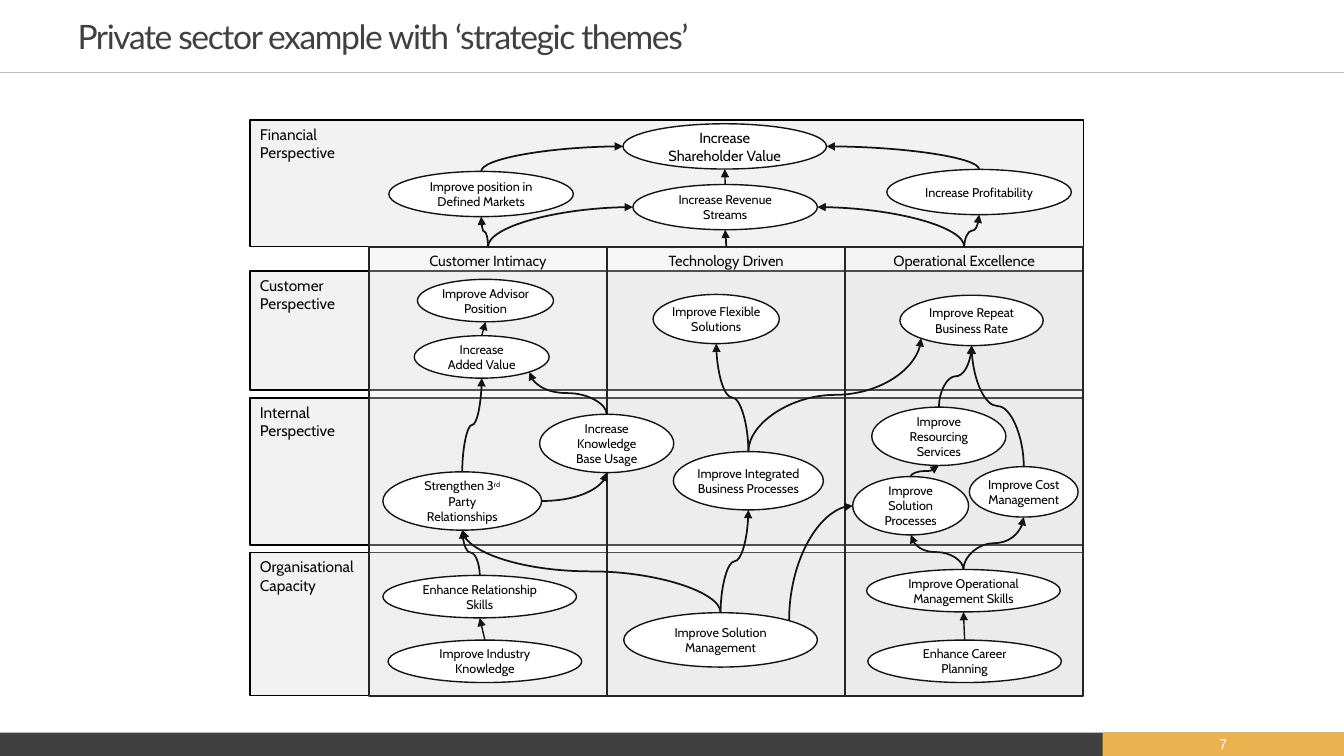
import pptx
import pptx.util
import pptx.dml.color
import pptx.enum.shapes
import pptx.enum.text
import pptx.oxml
import pptx.oxml.ns
import math

Cm, Pt = pptx.util.Cm, pptx.util.Pt
qn = pptx.oxml.ns.qn
SHAPE = pptx.enum.shapes.MSO_SHAPE
LINK = pptx.enum.shapes.MSO_CONNECTOR
ALIGN = pptx.enum.text.PP_ALIGN
ANCHOR = pptx.enum.text.MSO_ANCHOR

COLOURS = {"bar": "404040", "gold": "EBB250", "rule": "BFBFBF", "white": "FFFFFF",
           "black": "000000", "label": "080808", "row": "F2F2F2", "outline": "131313",
           "column line": "262626", "intimacy": "EAEAEA", "technology": "E6E6E6",
           "excellence": "DFDFDF"}
RGB = {name: pptx.dml.color.RGBColor.from_string(code) for name, code in COLOURS.items()}


def add_block(kind, box, fill, line=None, weight=1):
    block = slide.shapes.add_shape(kind, *[Cm(length) for length in box])
    block.shadow.inherit = False
    block.fill.solid()
    block.fill.fore_color.rgb = RGB[fill]
    if line:
        block.line.color.rgb = RGB[line]
        block.line.width = Pt(weight)
    else:
        block.line.fill.background()
    return block


def write(block, text, size, colour, font="Cabin", align=ALIGN.CENTER, **frame_format):
    """Text between ^ marks is set as superscript."""
    frame = block.text_frame
    for key, value in {"word_wrap": True, **frame_format}.items():
        setattr(frame, key, value)
    paragraph = frame.paragraphs[0]
    paragraph.alignment = align
    for i, part in enumerate(text.split("^")):
        for j, words in enumerate(part.split("\n")):
            if j:
                paragraph.add_line_break()
            run = paragraph.add_run()
            run.text = words
            for key, value in {"name": font, "size": Pt(size), "bold": False}.items():
                setattr(run.font, key, value)
            run.font.color.rgb = RGB[colour]
            if i % 2:
                run.font._element.set("baseline", "30000")


deck = pptx.Presentation()
deck.slide_width, deck.slide_height = Cm(33.87), Cm(19.05)
slide = deck.slides.add_slide(deck.slide_layouts[5])

# Title, rule and footer
title = slide.shapes.title
for key, value in {"left": 1.7, "top": 0.1, "width": 24.69, "height": 1.6}.items():
    setattr(title, key, Cm(value))
write(title, "Private sector example with ‘strategic themes’", 24, "bar", "Lato", ALIGN.LEFT,
      vertical_anchor=ANCHOR.MIDDLE, margin_top=0, margin_bottom=0,
      auto_size=pptx.enum.text.MSO_AUTO_SIZE.NONE)
title.text_frame.paragraphs[0].runs[0].font._element.set("spc", "-100")

rule = slide.shapes.add_connector(LINK.STRAIGHT, 0, Cm(1.83), deck.slide_width, Cm(1.83))
rule.line.color.rgb = RGB["rule"]
rule.line.width = Pt(1)
rule._element.spPr.append(pptx.oxml.parse_xml(
    '<a:effectLst xmlns:a="http://schemas.openxmlformats.org/drawingml/2006/main"/>'))

add_block(SHAPE.RECTANGLE, (0, 18.46, 33.87, 0.59), "bar")
page_number = add_block(SHAPE.RECTANGLE, (27.79, 18.46, 6.08, 0.59), "gold")
write(page_number, "7", 10, "white", "Arial", vertical_anchor=ANCHOR.MIDDLE,
      margin_top=0, margin_bottom=0)

# Perspectives (rows); the financial row lies above the themes
perspectives = [("Customer\nPerspective", 6.83, 3.0), ("Internal\nPerspective", 10.03, 3.71),
                ("Organisational\nCapacity", 13.92, 3.61), ("Financial\nPerspective", 3.02, 3.2)]
for name, top, height in perspectives:
    row = add_block(SHAPE.RECTANGLE, (6.3, top, 21.01, height), "row", "black")
    write(row, name, 11, "label", align=ALIGN.LEFT, vertical_anchor=ANCHOR.TOP)

# Strategic themes (translucent columns)
nodes = {}
themes = [("Customer Intimacy", "intimacy"), ("Technology Driven", "technology"),
          ("Operational Excellence", "excellence")]
for i, (name, fill) in enumerate(themes):
    column = add_block(SHAPE.RECTANGLE, (9.3 + 6 * i, 6.22, 6, 11.31), fill, "column line", 1.5)
    column._element.spPr.find(".//" + qn("a:srgbClr")).append(pptx.oxml.parse_xml(
        '<a:alpha xmlns:a="http://schemas.openxmlformats.org/drawingml/2006/main" val="35000"/>'))
    write(column, name, 10.5, "label", vertical_anchor=ANCHOR.TOP)
    nodes[fill] = column

# Objectives: key, text, box, side margin
objectives = [
    ("shareholder", "Increase Shareholder Value", (15.7, 3.12, 5.13, 1.14), 0.25),
    ("position", "Improve position in Defined Markets", (9.8, 4.32, 4.65, 1.14), 0.25),
    ("profit", "Increase Profitability", (22.35, 4.27, 4.65, 1.14), 0.25),
    ("revenue", "Increase Revenue Streams", (15.95, 4.65, 4.65, 1.14), 0.25),
    ("advisor", "Improve Advisor Position", (10.52, 7.04, 3.43, 1.07), 0),
    ("added value", "Increase Added Value", (10.44, 8.46, 3.4, 1.07), 0.25),
    ("flexible", "Improve Flexible Solutions", (16.46, 7.42, 3.18, 1.24), 0),
    ("repeat", "Improve Repeat Business Rate", (22.68, 7.44, 3.61, 1.27), 0),
    ("knowledge", "Increase Knowledge Base Usage", (13.6, 10.44, 3.38, 1.47), 0.25),
    ("third party", "Strengthen 3^rd^ Party Relationships", (9.65, 11.89, 4, 1.47), 0.25),
    ("integrated", "Improve Integrated Business Processes", (16.97, 11.38, 3.78, 1.47), 0),
    ("resourcing", "Improve Resourcing Services", (21.97, 10.26, 3.38, 1.47), 0.25),
    ("cost", "Improve Cost Management", (24.43, 11.76, 2.74, 1.27), 0),
    ("processes", "Improve Solution Processes", (21.49, 12.01, 2.92, 1.47), 0.25),
    ("relationship", "Enhance Relationship Skills", (9.65, 14.5, 4.88, 1.07), 0.25),
    ("solution", "Improve Solution Management", (15.72, 15.44, 4.88, 1.37), 0.25),
    ("operational", "Improve Operational Management Skills", (21.84, 14.35, 4.88, 1.07), 0.25),
    ("career", "Enhance Career Planning", (21.87, 16.13, 4.88, 1.07), 0.25),
    ("industry", "Improve Industry Knowledge", (9.78, 16.13, 4.88, 1.07), 0.25),
]
for key, text, box, margin in objectives:
    nodes[key] = add_block(SHAPE.OVAL, box, "white", "outline")
    write(nodes[key], text, 10.5 if key == "shareholder" else 9, "black",
          vertical_anchor=ANCHOR.MIDDLE, margin_left=Cm(margin), margin_right=Cm(margin))

# Arrows: start, site, end, site; oval sites run anticlockwise from 0 (top) in eighths
STRAIGHT = [("revenue", 0, "shareholder", 4), ("career", 0, "operational", 4),
            ("added value", 0, "advisor", 4), ("industry", 0, "relationship", 4)]
CURVED = [
    ("relationship", 0, "third party", 4), ("profit", 0, "shareholder", 6),
    ("operational", 0, "cost", 4), ("operational", 0, "processes", 4),
    ("solution", 7, "processes", 2), ("solution", 0, "third party", 4),
    ("solution", 0, "integrated", 4), ("cost", 0, "repeat", 4),
    ("integrated", 0, "repeat", 3), ("intimacy", 0, "position", 4),
    ("intimacy", 0, "revenue", 2), ("excellence", 0, "profit", 4),
    ("excellence", 0, "revenue", 6), ("technology", 0, "revenue", 4),
    ("integrated", 0, "flexible", 4), ("knowledge", 0, "added value", 5),
    ("third party", 6, "knowledge", 4), ("position", 0, "shareholder", 2),
    ("third party", 0, "added value", 4), ("resourcing", 0, "repeat", 4),
    ("processes", 0, "resourcing", 4),
]
for start, start_site, end, end_site in STRAIGHT + CURVED:
    curved = (start, start_site, end, end_site) in CURVED
    ends = []
    for node, site in ((nodes[start], start_site), (nodes[end], end_site)):
        angle = site * math.pi / 4
        ends += [round(node.left + node.width / 2 * (1 - math.sin(angle))),
                 round(node.top + node.height / 2 * (1 - math.cos(angle)))]
    x1, y1, x2, y2 = ends
    arrow = slide.shapes.add_connector(LINK.CURVE if curved else LINK.STRAIGHT, *ends)
    properties = arrow._element.spPr
    if curved and (end_site in (2, 6) or start_site == 6):
        properties.find(qn("a:prstGeom")).set("prst", "curvedConnector2")
    if curved and start_site != 6:
        # Leave upwards: a quarter turn about the middle of the arrow
        run, rise = abs(x2 - x1), y1 - y2
        frame = {"left": (x1 + x2 - rise) // 2, "top": (y1 + y2 - run) // 2,
                 "width": rise, "height": run}
        for key, value in frame.items():
            setattr(arrow, key, value)
        turn = {"rot": "5400000" if x2 > x1 else "16200000",
                "flipH": "1" if x2 > x1 else "0", "flipV": "1"}
        for key, value in turn.items():
            properties.find(qn("a:xfrm")).set(key, value)
    arrow.line.color.rgb = RGB["outline"]
    arrow.line.width = Pt(1.25 if curved else 1)
    arrow.line._get_or_add_ln().append(pptx.oxml.parse_xml(
        '<a:tailEnd xmlns:a="http://schemas.openxmlformats.org/drawingml/2006/main" type="triangle"/>'))
    properties.append(pptx.oxml.parse_xml(
        '<a:effectLst xmlns:a="http://schemas.openxmlformats.org/drawingml/2006/main"/>'))
    joints = arrow._element.find(".//" + qn("p:cNvCxnSpPr"))
    for tag, key, site in (("stCxn", start, start_site), ("endCxn", end, end_site)):
        joints.append(pptx.oxml.parse_xml(
            f'<a:{tag} xmlns:a="http://schemas.openxmlformats.org/drawingml/2006/main" '
            f'id="{nodes[key].shape_id}" idx="{site}"/>'))

deck.save("out.pptx")
